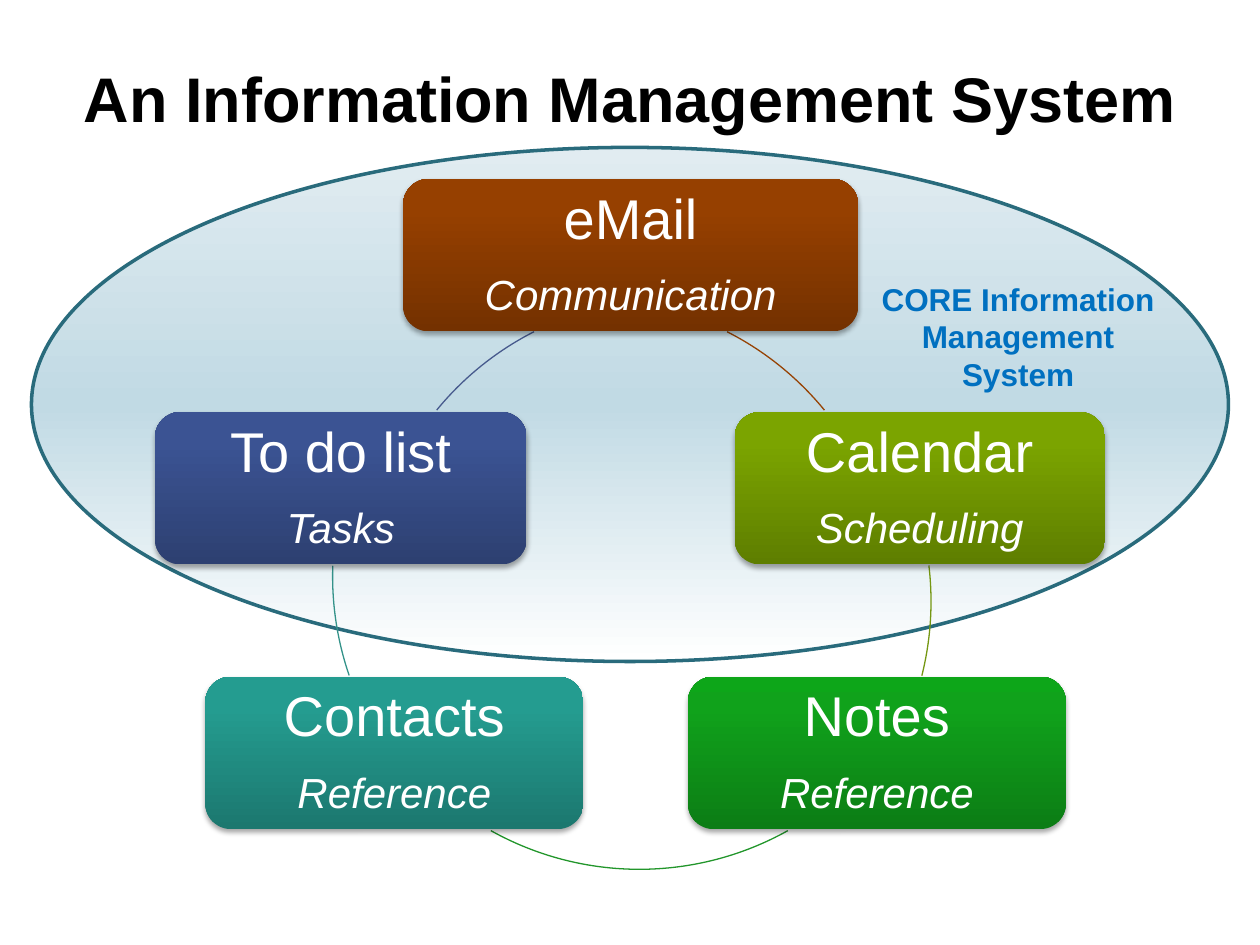
from copy import deepcopy

from lxml import etree
from pptx import Presentation
from pptx.dml.color import RGBColor
from pptx.enum import shapes, text
from pptx.oxml.ns import qn
from pptx.util import Inches, Pt

BLACK = RGBColor(0x00, 0x00, 0x00)
WHITE = RGBColor(0xFF, 0xFF, 0xFF)
CORE_BLUE = RGBColor(0x00, 0x70, 0xC0)
TEAL = RGBColor(0x29, 0x6B, 0x7C)
OVAL_FILL = (WHITE, RGBColor(0xC1, 0xDA, 0xE4), RGBColor(0xE1, 0xEC, 0xF1))
BROWN = (RGBColor(0x74, 0x31, 0x00), RGBColor(0x96, 0x40, 0x00), RGBColor(0x97, 0x41, 0x00))
OLIVE = (RGBColor(0x5E, 0x7E, 0x00), RGBColor(0x7B, 0xA4, 0x00), RGBColor(0x7B, 0xA5, 0x00))
GREEN = (RGBColor(0x0C, 0x7D, 0x15), RGBColor(0x10, 0xA2, 0x1B), RGBColor(0x0D, 0xA6, 0x19))
AQUA = (RGBColor(0x1C, 0x78, 0x6F), RGBColor(0x24, 0x9C, 0x90), RGBColor(0x22, 0x9F, 0x93))
NAVY = (RGBColor(0x2D, 0x40, 0x71), RGBColor(0x3B, 0x53, 0x93), RGBColor(0x39, 0x52, 0x95))
ARC_BROWN = RGBColor(0x96, 0x43, 0x05)
ARC_OLIVE = RGBColor(0x75, 0x97, 0x12)
ARC_GREEN = RGBColor(0x22, 0x96, 0x2B)
ARC_AQUA = RGBColor(0x33, 0x92, 0x89)
ARC_NAVY = RGBColor(0x47, 0x5A, 0x8D)


def write(p, words, size, color, bold=False, italic=False, line=None, after=None):
    p.alignment = text.PP_ALIGN.CENTER
    p.line_spacing = line
    p.space_after = after
    r = p.add_run()
    r.text = words
    r.font.name = "Arial"
    r.font.size = Pt(size)
    r.font.bold = bold
    r.font.italic = italic
    r.font.color.rgb = color


def fill_upward(sp, colors, middle):
    """Fill with three colours from bottom to top; middle places the second."""
    sp.fill.gradient()
    sp.fill.gradient_angle = 90
    stops = sp._element.spPr.find(".//" + qn("a:gsLst"))
    stops.append(deepcopy(stops[0]))
    for stop, color, position in zip(sp.fill.gradient_stops, colors, (0, middle, 1)):
        stop.color.rgb = color
        stop.position = position


prs = Presentation()
prs.slide_width, prs.slide_height = Inches(10), Inches(7.5)
s = prs.slides.add_slide(prs.slide_layouts[6])

# Oval around the core system
oval = s.shapes.add_shape(shapes.MSO_SHAPE.OVAL, Inches(0.25), Inches(1.17), Inches(9.5), Inches(4.08))
oval.shadow.inherit = False
fill_upward(oval, OVAL_FILL, 0.5)
oval.line.color.rgb = TEAL
oval.line.width = Pt(2)

# Title and core label
for words, left, top, width, height, size, color, anchor in (
    ("An Information Management System", 0.5, 0.3, 9, 0.95, 36, BLACK, text.MSO_ANCHOR.MIDDLE),
    ("CORE Information Management System", 6.83, 2.17, 2.5, 1.01, 18, CORE_BLUE, text.MSO_ANCHOR.TOP),
):
    tf = s.shapes.add_textbox(Inches(left), Inches(top), Inches(width), Inches(height)).text_frame
    tf.word_wrap = True
    tf.vertical_anchor = anchor
    write(tf.paragraphs[0], words, size, color, bold=True)

# Arcs of the ring: circle position, then start and end in degrees clockwise
RING = Inches(4.83)
for left, top, start, end, color in (
    (2.26, 2.37, 297, 320.7, ARC_BROWN),
    (2.56, 2.36, 353.2, 14.1, ARC_OLIVE),
    (2.66, 2.07, 60.8, 119.2, ARC_GREEN),
    (2.64, 2.16, 161, 182, ARC_AQUA),
    (2.92, 2.37, 219.3, 243, ARC_NAVY),
):
    arc = s.shapes.add_shape(shapes.MSO_SHAPE.ARC, Inches(left), Inches(top), RING, RING)
    arc.shadow.inherit = False
    arc.fill.background()
    arc.line.color.rgb = color
    arc.line.width = Pt(0.75)
    for i, degrees in enumerate((start, end)):
        arc.adjustments[i] = degrees * 0.6  # 60000ths of a degree over 100000

# Tool boxes
for tool, purpose, left, top, width, colors in (
    ("eMail", "Communication", 3.2, 1.42, 3.61, BROWN),
    ("Calendar", "Scheduling", 5.83, 3.27, 2.94, OLIVE),
    ("Notes", "Reference", 5.46, 5.37, 3, GREEN),
    ("Contacts", "Reference", 1.63, 5.37, 3, AQUA),
    ("To do list", "Tasks", 1.23, 3.27, 2.95, NAVY),
):
    box = s.shapes.add_shape(shapes.MSO_SHAPE.ROUNDED_RECTANGLE,
                             Inches(left), Inches(top), Inches(width), Inches(1.21))
    fill_upward(box, colors, 0.8)
    box.line.fill.background()
    box.shadow.inherit = False
    shadow = etree.SubElement(box._element.spPr.find(qn("a:effectLst")), qn("a:outerShdw"),
                              blurRad=str(Pt(3.1)), dist=str(Pt(1.8)), dir="5400000", rotWithShape="0")
    shade = etree.SubElement(shadow, qn("a:srgbClr"), val="000000")
    etree.SubElement(shade, qn("a:alpha"), val="35000")

    tf = box.text_frame
    tf.word_wrap = True
    tf.vertical_anchor = text.MSO_ANCHOR.MIDDLE
    tf.margin_left = tf.margin_right = tf.margin_top = tf.margin_bottom = Inches(0.13)
    write(tf.paragraphs[0], tool, 32, WHITE, line=0.9, after=Pt(13))
    write(tf.add_paragraph(), purpose, 24, WHITE, italic=True, line=0.9)

prs.save("out.pptx")
